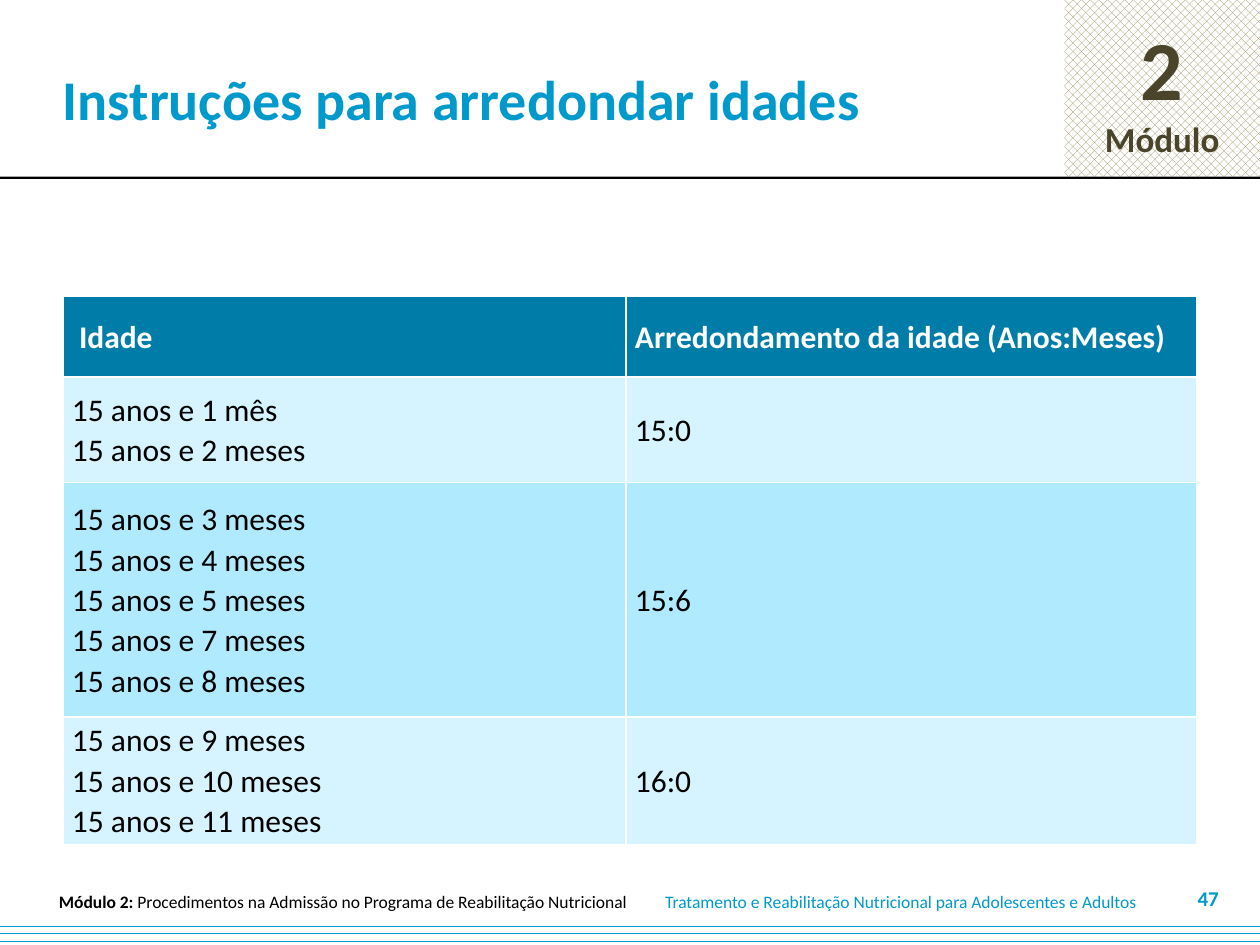
from lxml import etree
from pptx import Presentation
from pptx.dml.color import RGBColor
from pptx.enum.dml import MSO_PATTERN as PAT
from pptx.enum.shapes import MSO_SHAPE as SHP
from pptx.enum.text import MSO_ANCHOR as ANC, PP_ALIGN as AL
from pptx.oxml import parse_xml
from pptx.oxml.ns import nsdecls, qn
from pptx.util import Cm, Pt


def rgb(h):
    return RGBColor.from_string(h)


def write(tf, paras, align=AL.LEFT, spacing=None):
    for i, runs in enumerate(paras):
        p = tf.paragraphs[0] if i == 0 else tf.add_paragraph()
        p.alignment = align
        p.line_spacing = spacing
        for text, size, color, bold in runs:
            r = p.add_run()
            r.text = text
            for k, v in {"name": "Calibri", "size": Pt(size), "bold": bold}.items():
                setattr(r.font, k, v)
            r.font.color.rgb = rgb(color)


BLUE, BROWN, BLACK, WHITE = "0099CC", "4A452A", "000000", "FFFFFF"

prs = Presentation()
prs.slide_width, prs.slide_height = Cm(25.4), Cm(19.05)
s = prs.slides.add_slide(prs.slide_layouts[6])

rects = [
    ((21.46, 0, 3.94, 3.56), PAT.PERCENT_50, "948A54",
     [[("2", 48, BROWN, True)], [("Módulo", 20, BROWN, True)]]),
    ((-0.05, 3.56, 25.45, 0.05), None, BLACK, []),
    ((0, 18.52, 25.4, 0.53), PAT.DASHED_HORIZONTAL, BLUE, []),
]
for box, pattern, color, paras in rects:
    sp = s.shapes.add_shape(SHP.RECTANGLE, *map(Cm, box))
    sp.shadow.inherit = False
    sp.line.fill.background()
    if pattern:
        sp.fill.patterned()
        sp.fill.pattern = pattern
        sp.fill.back_color.rgb = rgb(WHITE)
    else:
        sp.fill.solid()
    sp.fill.fore_color.rgb = rgb(color)
    sp.text_frame.vertical_anchor = ANC.MIDDLE
    write(sp.text_frame, paras, AL.CENTER)

texts = [
    ((0, 0, 21.79, 3.94), AL.LEFT, {"word_wrap": True, "margin_left": Cm(1.27)},
     [("Instruções para arredondar idades", 32, BLUE, True)]),
    ((13.16, 17.91, 10.29, 0.51), AL.LEFT, {"word_wrap": False},
     [("Tratamento e Reabilitação Nutricional para Adolescentes e Adultos", 10, BLUE, False)]),
    ((0.74, 17.91, 12.34, 0.51), AL.CENTER, {"word_wrap": False},
     [("Módulo 2: ", 10, BLACK, True),
      ("Procedimentos na Admissão no Programa de Reabilitação Nutricional", 10, BLACK, False)]),
    ((23.55, 17.78, 1.27, 0.64), AL.RIGHT, {"word_wrap": True},
     [("47", 12, BLUE, True)]),
]
for box, align, fmt, runs in texts:
    tf = s.shapes.add_textbox(*map(Cm, box)).text_frame
    for k, v in {"vertical_anchor": ANC.MIDDLE, **fmt}.items():
        setattr(tf, k, v)
    write(tf, [runs], align)

rows = [
    (1.63, "007CA8", [" Idade"], "Arredondamento da idade (Anos:Meses)"),
    (2.13, "D5F4FF", ["15 anos e 1 mês", "15 anos e 2 meses"], "15:0"),
    (4.72, "AFEAFF", [f"15 anos e {m} meses" for m in (3, 4, 5, 7, 8)], "15:6"),
    (2.57, "D5F4FF", [f"15 anos e {m} meses" for m in (9, 10, 11)], "16:0"),
]
tbl = s.shapes.add_table(len(rows), 2, Cm(1.27), Cm(5.97), Cm(22.86), Cm(11.05)).table
for col, width in zip(tbl.columns, (11.35, 11.51)):
    col.width = Cm(width)
cell_fmt = {"vertical_anchor": ANC.MIDDLE, "margin_left": Cm(0.18), "margin_right": Cm(0.18),
            "margin_top": 0, "margin_bottom": 0}
for i, (height, fill, ages, rounded) in enumerate(rows):
    tbl.rows[i].height = Cm(height)
    for j, lines in enumerate((ages, [rounded])):
        c = tbl.cell(i, j)
        for k, v in cell_fmt.items():
            setattr(c, k, v)
        tcPr = c._tc.get_or_add_tcPr()
        for side in "LRTB":
            ln = parse_xml(f'<a:ln{side} {nsdecls("a")} w="12700"/>')
            solid = etree.SubElement(ln, qn("a:solidFill"))
            etree.SubElement(solid, qn("a:srgbClr"), val=WHITE)
            tcPr.append(ln)
        c.fill.solid()
        c.fill.fore_color.rgb = rgb(fill)
        color = BLACK if i else WHITE
        write(c.text_frame, [[(t, 18, color, i == 0)] for t in lines], spacing=1.05)

prs.save("out.pptx")
